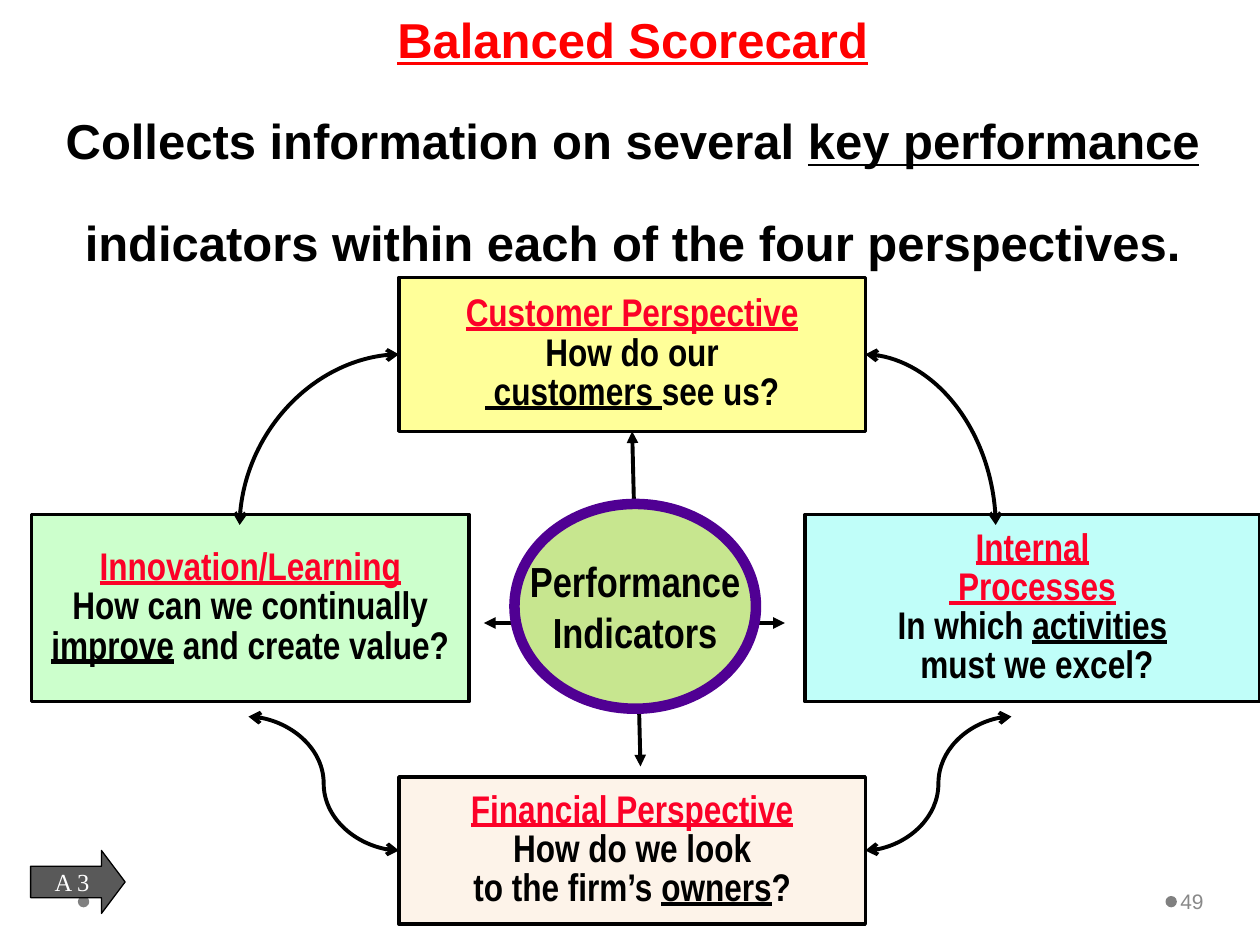
from lxml import etree
from pptx import Presentation
from pptx import util as u
from pptx.dml import color as col
from pptx.enum import shapes, text
from pptx.oxml import ns

Pt = u.Pt
SHAPE = shapes.MSO_SHAPE
LINK = shapes.MSO_CONNECTOR
MID = text.MSO_ANCHOR.MIDDLE
CENTER = text.PP_ALIGN.CENTER


def rgb(code):
    """Turn a hex string into a colour."""
    return col.RGBColor.from_string(code)


def say(para, words, size=22, font="Arial Narrow", color="000000", bold=True, align=CENTER, gap=None):
    """Add text to a paragraph, underlining what stands between underscores."""
    para.alignment = align
    if gap:
        para.line_spacing = gap
    for i, part in enumerate(words.split("_")):
        for j, line in enumerate(part.split("\n")):
            if j:
                para.add_line_break()
            if line:
                run = para.add_run()
                run.text = line
                face = run.font
                face.size, face.name, face.bold = Pt(size), font, bold
                face.underline = i % 2 == 1
                face.color.rgb = rgb(color)


class Board:
    """Hold the style and the current slide."""

    ink = "000000"
    red = "FC0128"

    def __init__(self, deck):
        """Add a title-only slide."""
        self.slide = deck.slides.add_slide(deck.slide_layouts[5])
        self.items = self.slide.shapes

    def title(self, box, head, body):
        """Place and fill the title."""
        item = self.items.title
        item.left, item.top, item.width, item.height = map(Pt, box)
        frame = item.text_frame
        frame.word_wrap = True
        frame.auto_size = text.MSO_AUTO_SIZE.NONE
        frame.vertical_anchor = text.MSO_ANCHOR.BOTTOM
        para = frame.paragraphs[0]
        for words, color in ((head, "FF0000"), (body, self.ink)):
            say(para, words, size=28, font="Arial", color=color, gap=Pt(58))

    def shape(self, kind, box, fill, line=None, width=2):
        """Draw a preset shape and return it."""
        item = self.items.add_shape(kind, *map(Pt, box))
        item.shadow.inherit = False
        item.fill.solid()
        item.fill.fore_color.rgb = rgb(fill)
        if line:
            item.line.color.rgb = rgb(line)
            item.line.width = Pt(width)
        else:
            item.line.fill.background()
        frame = item.text_frame
        frame.word_wrap = False
        frame.vertical_anchor = MID
        return item

    def panel(self, box, fill, head, body):
        """Draw a perspective with its heading and question."""
        item = self.shape(SHAPE.RECTANGLE, box, fill, self.ink)
        frame = item.text_frame
        say(frame.paragraphs[0], head, color=self.red, gap=0.85)
        say(frame.add_paragraph(), body, gap=0.85)
        return item

    def label(self, box, words, **form):
        """Write a text box."""
        frame = self.items.add_textbox(*map(Pt, box)).text_frame
        frame.word_wrap = True
        frame.vertical_anchor = MID
        frame.margin_left = Pt(2)
        say(frame.paragraphs[0], words, **form)

    def arrow(self, start, end, kind=LINK.STRAIGHT, tip="triangle", preset=None):
        """Draw a two-headed connector and return it."""
        item = self.items.add_connector(kind, *map(Pt, start + end))
        item.line.color.rgb = rgb(self.ink)
        item.line.width = Pt(2.25)
        props = item._element.spPr
        if preset:
            props.find(ns.qn("a:prstGeom")).set("prst", preset)
        line = props.find(ns.qn("a:ln"))
        for name in ("a:headEnd", "a:tailEnd"):
            etree.SubElement(line, ns.qn(name), type=tip)
        etree.SubElement(props, ns.qn("a:effectLst"))
        return item


def main():
    """Build the scorecard slide."""
    deck = Presentation()
    deck.slide_width, deck.slide_height = Pt(720), Pt(540)
    board = Board(deck)
    board.title((1.5, 68.5, 720, 90), "_Balanced Scorecard_\n",
                "Collects information on several _key performance _"
                "indicators within each of the four perspectives.")
    for left in (666, 44.5):
        board.shape(SHAPE.OVAL, (left, 512, 6.5, 6.5), "808080")

    stem = board.arrow((363, 247), (366, 438))
    board.arrow((276.5, 356), (448.5, 356))
    board.panel((18, 294, 250, 107), "CCFFCC", "_Innovation/Learning_",
                "How can we continually\n_improve_ and create value?")
    board.panel((460, 294, 260, 107), "C0FEF9", "_Internal\n Processes_",
                "In which _activities_\n must we excel?")
    hub = board.shape(SHAPE.OVAL, (294, 288, 138, 117), "C7E68F", "500093", 6)
    say(hub.text_frame.paragraphs[0], "Performance\nIndicators", size=24)
    board.panel((228, 444, 266.5, 84), "FDF3E9", "_Financial Perspective_",
                "How do we look\nto the firm’s _owners_?")
    top = board.panel((228, 158.5, 266.5, 88), "FFFF99", "_Customer Perspective_",
                      "How do our\n_ customers _see us?")
    stem.begin_connect(top, 2)

    for side, high, low in ((494.5, 569, 578), (228, 137, 142)):
        board.arrow((side, 202.5), (high, 300), LINK.CURVE, "arrow", "curvedConnector2")
        board.arrow((side, 486), (low, 409.5), LINK.CURVE, "arrow")

    board.label((672.5, 500.5, 44, 29), "49", size=12, font="Arial",
                color="898989", bold=False, align=text.PP_ALIGN.LEFT)
    tag = board.shape(SHAPE.RIGHT_ARROW, (17.5, 486, 54, 36), "595959", board.ink, 0.75)
    tag.adjustments[1] = 0.375
    say(tag.text_frame.paragraphs[0], "A 3", size=14, font="Times New Roman",
        color="FFFFFF", bold=False)
    deck.save("out.pptx")


if __name__ == "__main__":
    main()
